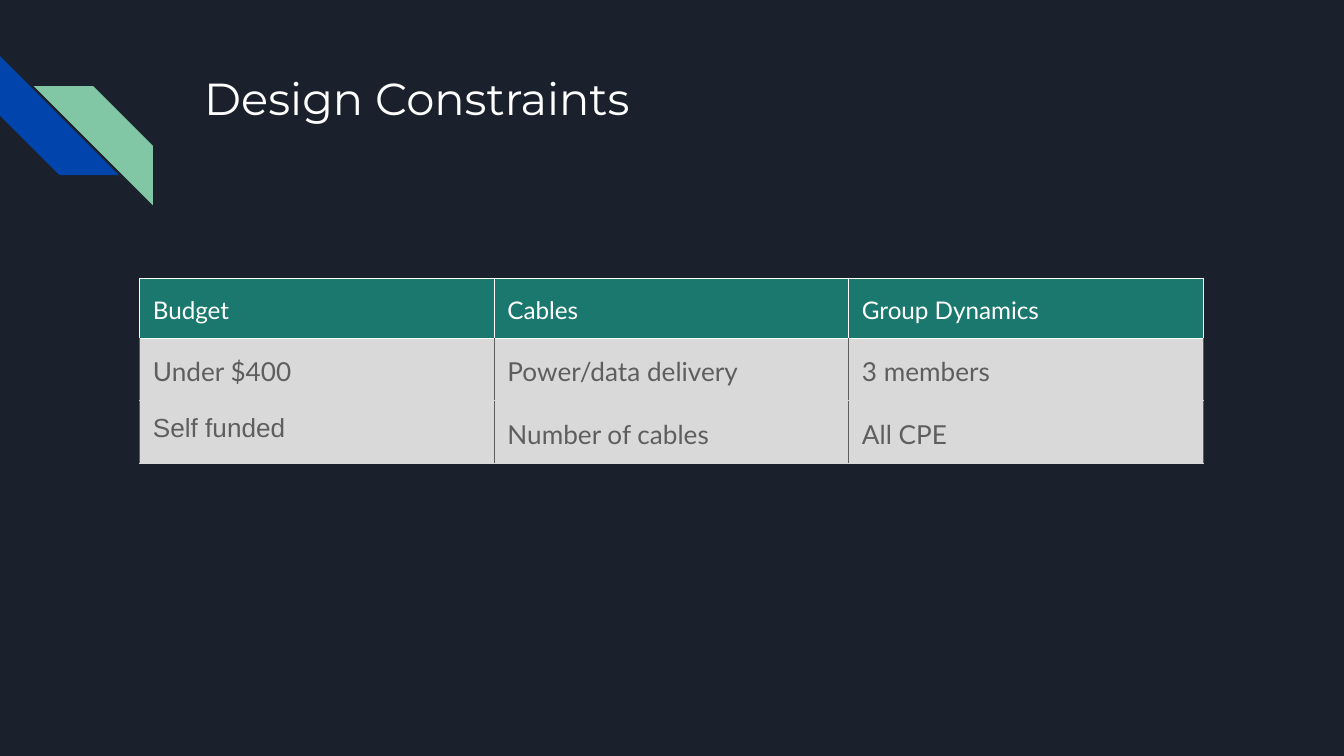
import lxml.etree
import pptx
import pptx.dml.color
import pptx.enum.shapes
import pptx.enum.text
import pptx.oxml.ns
import pptx.util
from pptx.util import Cm

WHITE, GREY, SILVER, TEAL = "FFFFFF", "5E5E5E", "D9D9D9", "1B786E"
INSET = Cm(0.25)
CONSTRAINTS = [
    ["Budget", "Cables", "Group Dynamics"],
    ["Under $400", "Power/data delivery", "3 members"],
    ["Self funded", "Number of cables", "All CPE"],
]


def rgb(value):
    """Turn a hex string into a colour."""
    return pptx.dml.color.RGBColor.from_string(value)


def style_text(paragraph, size, font, color):
    """Format every run of a paragraph."""
    for run in paragraph.runs:
        run.font.size = pptx.util.Pt(size)
        run.font.name = font
        run.font.bold = False
        run.font.color.rgb = rgb(color)


def set_insets(holder):
    """Give a text frame or a cell the same margin on all sides."""
    holder.margin_left = holder.margin_right = INSET
    holder.margin_top = holder.margin_bottom = INSET


def add_stripe(slide, left, top, rotation, color):
    """Add one diagonal stripe of the corner ornament."""
    stripe = slide.shapes.add_shape(
        pptx.enum.shapes.MSO_SHAPE.DIAGONAL_STRIPE, Cm(left), Cm(top), Cm(2.25), Cm(2.25))
    stripe.rotation = rotation
    stripe.shadow.inherit = False
    stripe.fill.solid()
    stripe.fill.fore_color.rgb = rgb(color)
    stripe.line.fill.background()


def add_title(slide, title):
    """Add the slide heading."""
    frame = slide.shapes.add_textbox(Cm(3.61), Cm(1.09), Cm(19.56), Cm(2.54)).text_frame
    frame.word_wrap = True
    frame.vertical_anchor = pptx.enum.text.MSO_ANCHOR.TOP
    set_insets(frame)
    frame.text = title
    style_text(frame.paragraphs[0], 24, "Montserrat", WHITE)


def set_borders(cell, left_right, top, bottom):
    """Draw the four borders of a cell."""
    properties = cell._tc.get_or_add_tcPr()
    sides = {"lnL": left_right, "lnR": left_right, "lnT": top, "lnB": bottom}
    for side, color in sides.items():
        border = lxml.etree.SubElement(
            properties, pptx.oxml.ns.qn(f"a:{side}"), w=str(pptx.util.Pt(0.75)))
        fill = lxml.etree.SubElement(border, pptx.oxml.ns.qn("a:solidFill"))
        lxml.etree.SubElement(fill, pptx.oxml.ns.qn("a:srgbClr"), val=color)


def fill_cell(cell, text, row):
    """Write and style one cell according to its row."""
    header = row == 0
    set_insets(cell)
    if header:
        set_borders(cell, WHITE, WHITE, WHITE)
    else:
        set_borders(cell, GREY, WHITE if row == 1 else SILVER, SILVER)
    cell.fill.solid()
    cell.fill.fore_color.rgb = rgb(TEAL if header else SILVER)
    cell.text_frame.text = text
    paragraph = cell.text_frame.paragraphs[0]
    plain = text == "Self funded"
    if not plain:
        paragraph.line_spacing = 1.15
        paragraph.space_after = pptx.util.Pt(12)
    style_text(paragraph, 13 if header else 14, "Arial" if plain else "Lato",
               WHITE if header else GREY)


def add_constraints_table(slide, rows):
    """Add the table with one column per constraint."""
    width, height = Cm(6.7), Cm(1.07)
    columns = len(rows[0])
    table = slide.shapes.add_table(
        len(rows), columns, Cm(2.64), Cm(5.26), width * columns, height * len(rows)).table
    table.first_row = table.horz_banding = False
    for column in table.columns:
        column.width = width
    for row, texts in enumerate(rows):
        table.rows[row].height = height
        for column, text in enumerate(texts):
            fill_cell(table.cell(row, column), text, row)


def main():
    """Build the design constraints slide."""
    deck = pptx.Presentation()
    deck.slide_width, deck.slide_height = Cm(25.4), Cm(14.29)
    slide = deck.slides.add_slide(deck.slide_layouts[6])
    slide.background.fill.solid()
    slide.background.fill.fore_color.rgb = rgb("1B212C")
    add_stripe(slide, 0, 1.06, 270, "0145AC")
    add_stripe(slide, 0.64, 1.63, 90, "82C7A5")
    add_title(slide, "Design Constraints")
    add_constraints_table(slide, CONSTRAINTS)
    deck.save("out.pptx")


if __name__ == "__main__":
    main()
